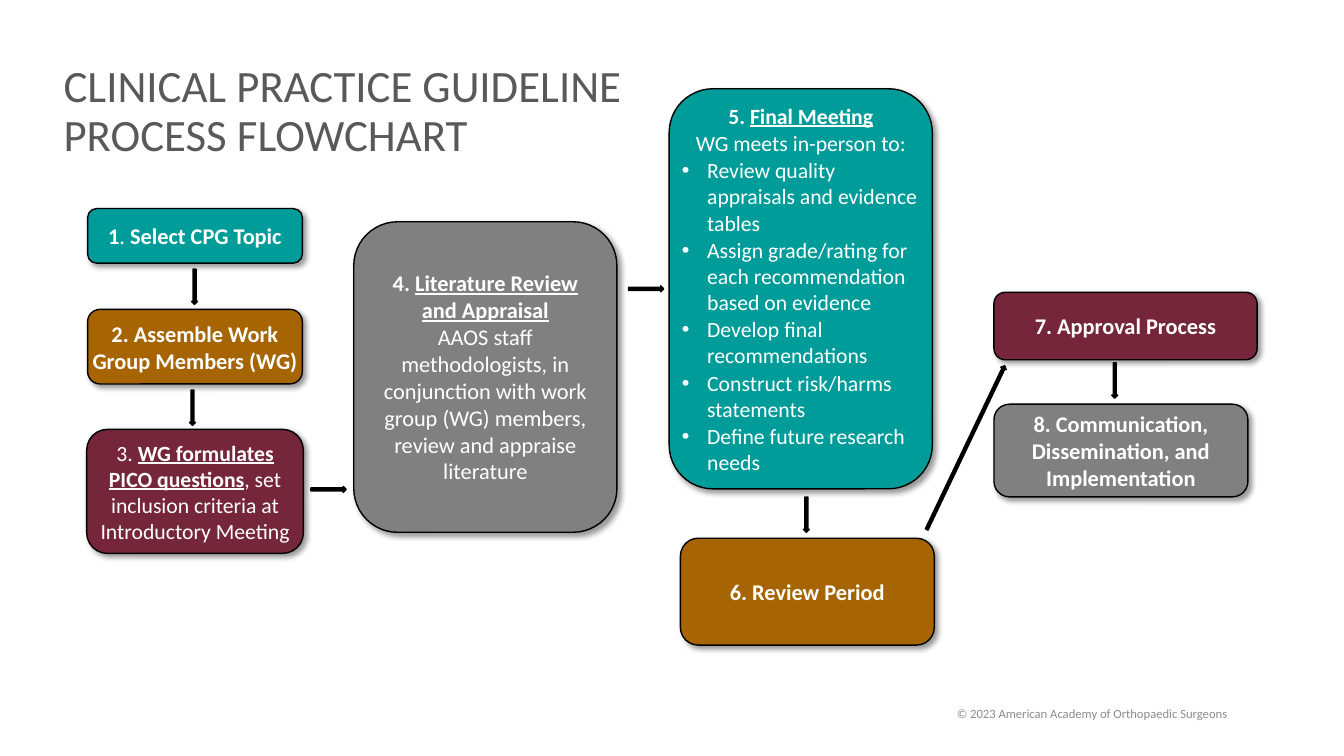
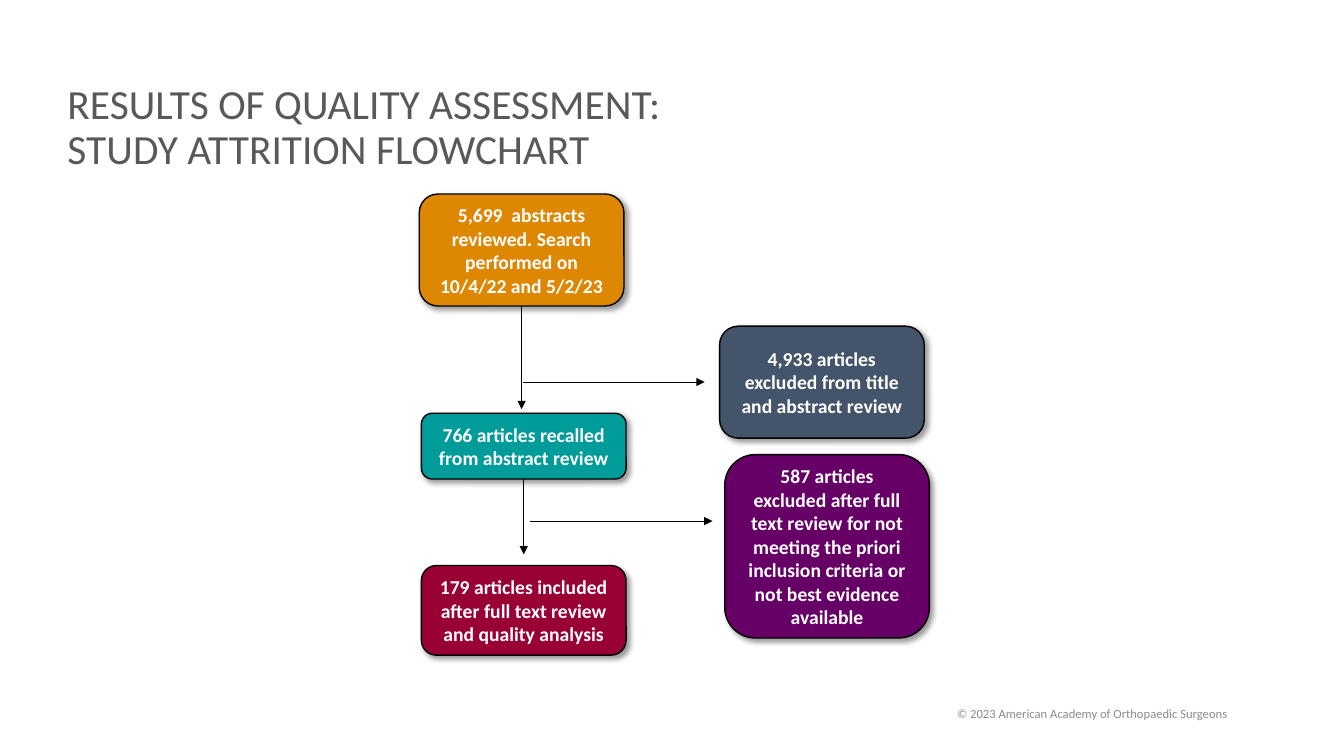
from pptx import Presentation
from pptx.dml.color import RGBColor
from pptx.enum.shapes import MSO_CONNECTOR, MSO_SHAPE
from pptx.enum.text import MSO_ANCHOR, MSO_AUTO_SIZE, PP_ALIGN
from pptx.oxml.ns import qn
from pptx.util import Pt
from lxml.etree import SubElement

COLOURS = {
    "title": "595959", "footer": "8C8C8C", "black": "000000", "white": "FFFFFF",
    "teal": "009C99", "brown": "A66502", "maroon": "75263B", "grey": "808080",
    "amber": "DE8703", "slate": "44546A", "purple": "660066", "crimson": "990033",
}
FONT = "Calibri"
FOOTER = "© 2023 American Academy of Orthopaedic Surgeons"


def colour(name):
    return RGBColor.from_string(COLOURS[name])


class FlowDeck:
    """Holds the shared style and the slide being drawn."""

    def __init__(self):
        self.deck = Presentation()
        self.deck.slide_width, self.deck.slide_height = Pt(960), Pt(540)
        self.page = None

    def new_page(self, title_lines, title_bounds, title_size):
        self.page = self.deck.slides.add_slide(self.deck.slide_layouts[5])
        # Title
        title = self.page.shapes.title
        title.left, title.top, title.width, title.height = map(Pt, title_bounds)
        frame = self.prepare(title.text_frame)
        frame.text = "\n".join(title_lines)
        for para in frame.paragraphs:
            para.line_spacing = 0.9
            self.style(para, title_size, "title", PP_ALIGN.LEFT)
        # Footer
        box = self.page.shapes.add_textbox(Pt(618), Pt(495.5), Pt(324), Pt(28.8))
        frame = self.prepare(box.text_frame)
        frame.text = FOOTER
        self.style(frame.paragraphs[0], 9, "footer")

    def prepare(self, frame, insets=(7.2, 3.6)):
        frame.word_wrap = True
        frame.auto_size = MSO_AUTO_SIZE.NONE
        frame.vertical_anchor = MSO_ANCHOR.MIDDLE
        frame.margin_left = frame.margin_right = Pt(insets[0])
        frame.margin_top = frame.margin_bottom = Pt(insets[1])
        return frame

    def style(self, para, size, ink, align=PP_ALIGN.CENTER):
        para.alignment = align
        para.font.name, para.font.size = FONT, Pt(size)
        para.font.color.rgb = colour(ink)

    def shape(self, kind, bounds, fill):
        shape = self.page.shapes.add_shape(kind, *map(Pt, bounds))
        shape.fill.solid()
        shape.fill.fore_color.rgb = colour(fill)
        shape.line.color.rgb = colour("black")
        shape.line.width = Pt(1)
        shape.shadow.inherit = False
        return shape

    def card(self, bounds, fill, paragraphs, size=16, insets=(0, 0), space_after=0):
        """A paragraph is bold text or a list of (text, flags), flags from b and u."""
        card = self.shape(MSO_SHAPE.ROUNDED_RECTANGLE, bounds, fill)
        effects = card._element.spPr.find(qn("a:effectLst"))
        shadow = SubElement(effects, qn("a:outerShdw"), blurRad=str(Pt(4)),
                            dist=str(Pt(3)), dir="2700000", algn="tl", rotWithShape="0")
        shade = SubElement(shadow, qn("a:srgbClr"), val=COLOURS["black"])
        SubElement(shade, qn("a:alpha"), val="40000")
        frame = self.prepare(card.text_frame, insets)
        for number, content in enumerate(paragraphs):
            para = frame.paragraphs[0] if number == 0 else frame.add_paragraph()
            spans = [(content, "b")] if isinstance(content, str) else content
            para.space_after = Pt(space_after)
            self.style(para, size, "white")
            flag_sets = {flags for _, flags in spans}
            if len(flag_sets) == 1:
                para.font.bold = "b" in spans[0][1]
            for text, flags in spans:
                span = para.add_run()
                span.text = text
                if len(flag_sets) > 1:
                    span.font.bold = "b" in flags
                    span.font.underline = "u" in flags
        return card

    def bullets(self, card, items, size, space_after):
        for item in items:
            para = card.text_frame.add_paragraph()
            para.space_after = Pt(space_after)
            properties = para._p.get_or_add_pPr()
            properties.set("marL", str(Pt(18)))
            properties.set("indent", str(Pt(-18)))
            SubElement(properties, qn("a:buFont"), typeface="Arial")
            SubElement(properties, qn("a:buChar"), char="•")
            para.text = item
            self.style(para, size, "white", PP_ALIGN.LEFT)

    def arrow(self, centre_x, centre_y, rotation=0, length=25.2, width=4.3):
        bounds = (centre_x - width / 2, centre_y - length / 2, width, length)
        self.shape(MSO_SHAPE.DOWN_ARROW, bounds, "black").rotation = rotation

    def line(self, start, end, source=None):
        line = self.page.shapes.add_connector(MSO_CONNECTOR.STRAIGHT, *map(Pt, start + end))
        if source is not None:
            line.begin_connect(source, 2)
            line.end_x = line.begin_x
        line.line.color.rgb = colour("black")
        line.line.width = Pt(0.5)
        SubElement(line.line._get_or_add_ln(), qn("a:tailEnd"), type="triangle")
        SubElement(line._element.spPr, qn("a:effectLst"))


def process_page(flow):
    flow.new_page(["CLINICAL PRACTICE GUIDELINE", "PROCESS FLOWCHART"],
                  (38.2, 53.3, 876, 54), 32)
    # Preparation steps
    flow.card((62.6, 149, 153.4, 39), "teal",
              [[("1", "b"), (". ", ""), ("Select CPG Topic", "b")]], insets=(2.9, 2.9))
    flow.card((62.6, 221, 153.4, 53.3), "brown", ["2. Assemble Work Group Members (WG)"])
    flow.card((61.9, 306.7, 154.8, 88.6), "maroon",
              [[("3. ", ""), ("WG formulates PICO questions", "bu"),
                (", set inclusion criteria at Introductory Meeting", "")]], 15.5)
    # Literature review
    flow.card((252.7, 158.4, 188, 221.8), "grey",
              [[("4. ", "b"), ("Literature Review and Appraisal", "bu")],
               [("AAOS staff methodologists, in conjunction with work group (WG) "
                 "members, review and appraise literature", "")]], insets=(7.2, 2.9))
    # Review period and final meeting
    flow.card((486, 384.5, 181.4, 76.3), "brown", ["6. Review Period"])
    meeting = flow.card((478, 63.4, 188, 285.8), "teal",
                        [[("5. ", "b"), ("Final Meeting", "bu")],
                         [("WG meets in-person to:", "")]], 15.5, space_after=1)
    flow.bullets(meeting, [
        "Review quality appraisals and evidence tables",
        "Assign grade/rating for each recommendation based on evidence",
        "Develop final recommendations",
        "Construct risk/harms statements",
        "Define future research needs",
    ], 15.5, 1)
    # Approval and communication
    flow.card((710, 208.8, 188, 48.2), "maroon", ["7. Approval Process"], insets=(7.2, 2.9))
    flow.card((710, 288.7, 181.4, 66.2), "grey",
              ["8. Communication, Dissemination, and Implementation"])
    # Arrows: down, right, then the long one up to approval
    for centre in [(139, 204.8), (137.5, 291.2), (796.3, 271.8), (576, 367.6)]:
        flow.arrow(*centre)
    for centre in [(234.7, 349.6), (461.5, 206.3)]:
        flow.arrow(*centre, rotation=270)
    flow.arrow(689.8, 319.7, rotation=205.5, length=129.6)


def attrition_page(flow):
    flow.new_page(["RESULTS OF QUALITY ASSESSMENT:", "STUDY ATTRITION FLOWCHART"],
                  (41, 42.5, 463, 98.6), 29.6)
    # Article counts: left, top, height, fill, text
    cards = [
        (299.5, 138.6, 80, "amber",
         "5,699  abstracts reviewed. Search performed on 10/4/22 and 5/2/23"),
        (301, 295.2, 47, "teal", "766 articles recalled from abstract review"),
        (301, 404, 64, "crimson",
         "179 articles included after full text review and quality analysis"),
        (514, 233, 80, "slate", "4,933 articles excluded from title and abstract review"),
        (517.7, 324.7, 131, "purple",
         "587 articles excluded after full text review for not meeting the priori "
         "inclusion criteria or not best evidence available"),
    ]
    reviewed, recalled, *_ = [
        flow.card((left, top, 146.2, height), fill, [text], 14, (7.2, 3.6))
        for left, top, height, fill, text in cards]
    # Flow down, then exclusions to the right
    flow.line((372.6, 218.6), (372.6, 292.3), reviewed)
    flow.line((374, 342.2), (374, 396), recalled)
    flow.line((373.7, 272.9), (503.3, 272.9))
    flow.line((378.7, 372.2), (509, 372.2))


def main():
    flow = FlowDeck()
    process_page(flow)
    attrition_page(flow)
    flow.deck.save("out.pptx")


if __name__ == "__main__":
    main()
